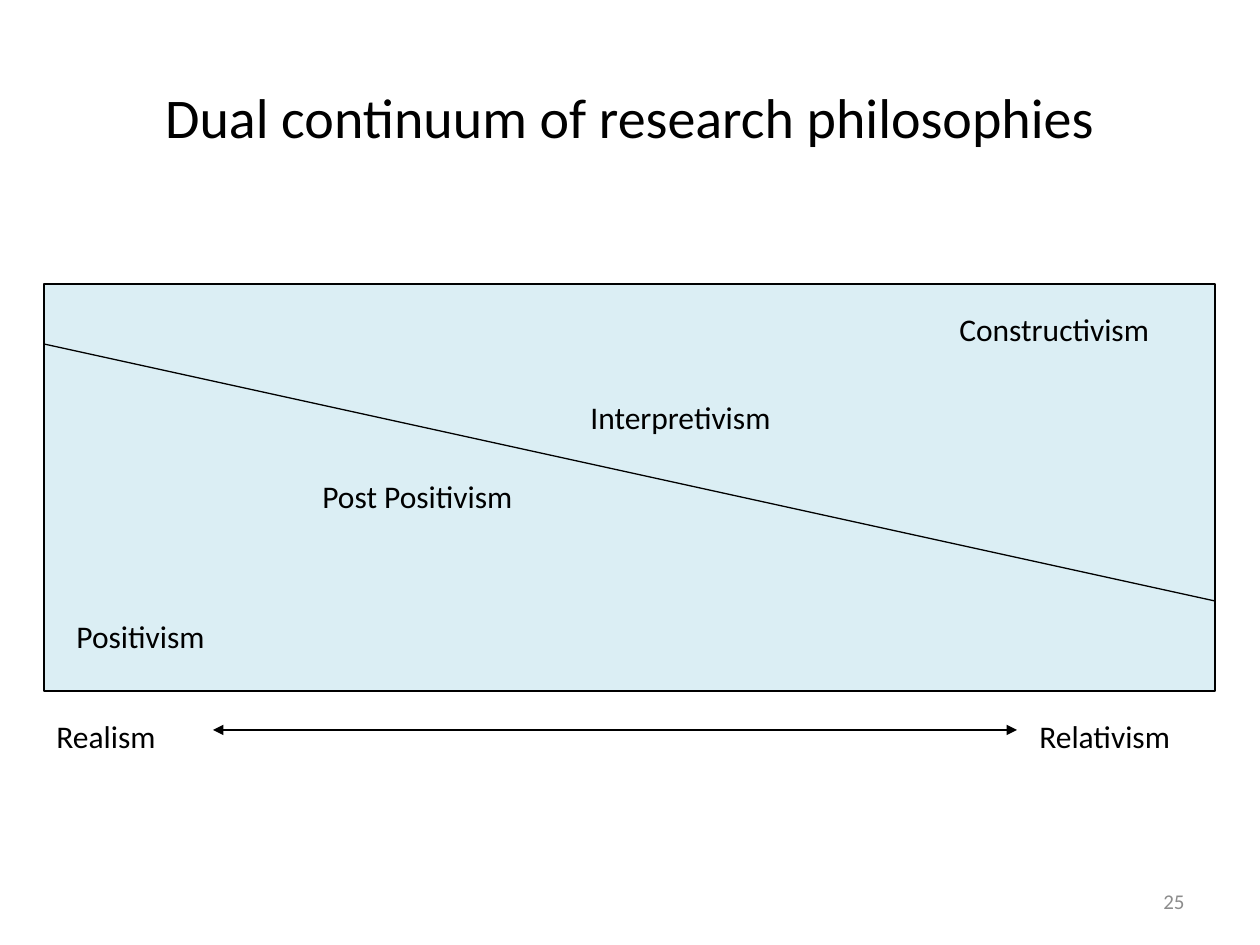
"""Build the slide on the dual continuum of research philosophies."""
from lxml import etree
from pptx import Presentation
from pptx.dml.color import RGBColor
from pptx.enum.shapes import MSO_CONNECTOR, MSO_SHAPE
from pptx.enum.text import MSO_ANCHOR, MSO_AUTO_SIZE, PP_ALIGN
from pptx.oxml.ns import qn
from pptx.util import Pt

STRAIGHT, RECTANGLE = MSO_CONNECTOR.STRAIGHT, MSO_SHAPE.RECTANGLE
TOP, MIDDLE = MSO_ANCHOR.TOP, MSO_ANCHOR.MIDDLE
LEFT, CENTER, RIGHT = PP_ALIGN.LEFT, PP_ALIGN.CENTER, PP_ALIGN.RIGHT
GROW = MSO_AUTO_SIZE.SHAPE_TO_FIT_TEXT

EMU_PER_PX = 914400 / 126
FONT = "Calibri"
COLORS = {"ink": "000000", "panel": "DBEEF4", "number": "8C8C8C"}

TITLE = "Dual continuum of research philosophies"
TITLE_BOX = (63, 38, 1134, 157)
PANEL_BOX = (44, 284, 1171, 407)
DIVIDER_DROPS = (60, 317)
SCALE_ARROW = (213, 730, 1017, 730)
PAGE_NUMBER = "25"
PAGE_NUMBER_BOX = (903, 876, 294, 50)

LABELS = [
    ("Positivism", (64, 611, 155, 50)),
    ("Constructivism", (947, 304, 217, 50)),
    ("Post Positivism", (310, 471, 217, 50)),
    ("Interpretivism", (578, 392, 208, 50)),
    ("Realism", (44, 711, 152, 54)),
    ("Relativism", (1027, 711, 186, 54)),
]


def px(*lengths):
    return [round(length * EMU_PER_PX) for length in lengths]


def color(name):
    return RGBColor.from_string(COLORS[name])


def write(frame, text, size, ink="ink", align=LEFT, anchor=TOP):
    frame.vertical_anchor = anchor
    paragraph = frame.paragraphs[0]
    paragraph.alignment = align
    run = paragraph.add_run()
    run.text = text
    run.font.name = FONT
    run.font.size = Pt(size)
    run.font.color.rgb = color(ink)


def outline(line):
    line.color.rgb = color("ink")
    line.width = Pt(0.75)


def add_line(slide, ends, arrows=False):
    connector = slide.shapes.add_connector(STRAIGHT, *px(*ends))
    outline(connector.line)
    properties = connector._element.spPr
    if arrows:
        stroke = properties.find(qn("a:ln"))
        for end in ("a:headEnd", "a:tailEnd"):
            etree.SubElement(stroke, qn(end), type="triangle")
    etree.SubElement(properties, qn("a:effectLst"))


def main():
    deck = Presentation()
    deck.slide_width, deck.slide_height = px(1260, 945)
    slide = deck.slides.add_slide(deck.slide_layouts[5])

    title = slide.shapes.title
    title.left, title.top, title.width, title.height = px(*TITLE_BOX)
    write(title.text_frame, TITLE, 32, align=CENTER, anchor=MIDDLE)

    panel = slide.shapes.add_shape(RECTANGLE, *px(*PANEL_BOX))
    panel.shadow.inherit = False
    panel.fill.solid()
    panel.fill.fore_color.rgb = color("panel")
    outline(panel.line)

    left, top, width, _ = PANEL_BOX
    start_drop, end_drop = DIVIDER_DROPS
    add_line(slide, (left, top + start_drop, left + width, top + end_drop))

    for label, box in LABELS:
        frame = slide.shapes.add_textbox(*px(*box)).text_frame
        frame.word_wrap = False
        frame.auto_size = GROW
        write(frame, label, 18)

    add_line(slide, SCALE_ARROW, arrows=True)

    number = slide.shapes.add_textbox(*px(*PAGE_NUMBER_BOX)).text_frame
    number.word_wrap = True
    write(number, PAGE_NUMBER, 12, "number", RIGHT, MIDDLE)

    deck.save("out.pptx")


if __name__ == "__main__":
    main()
